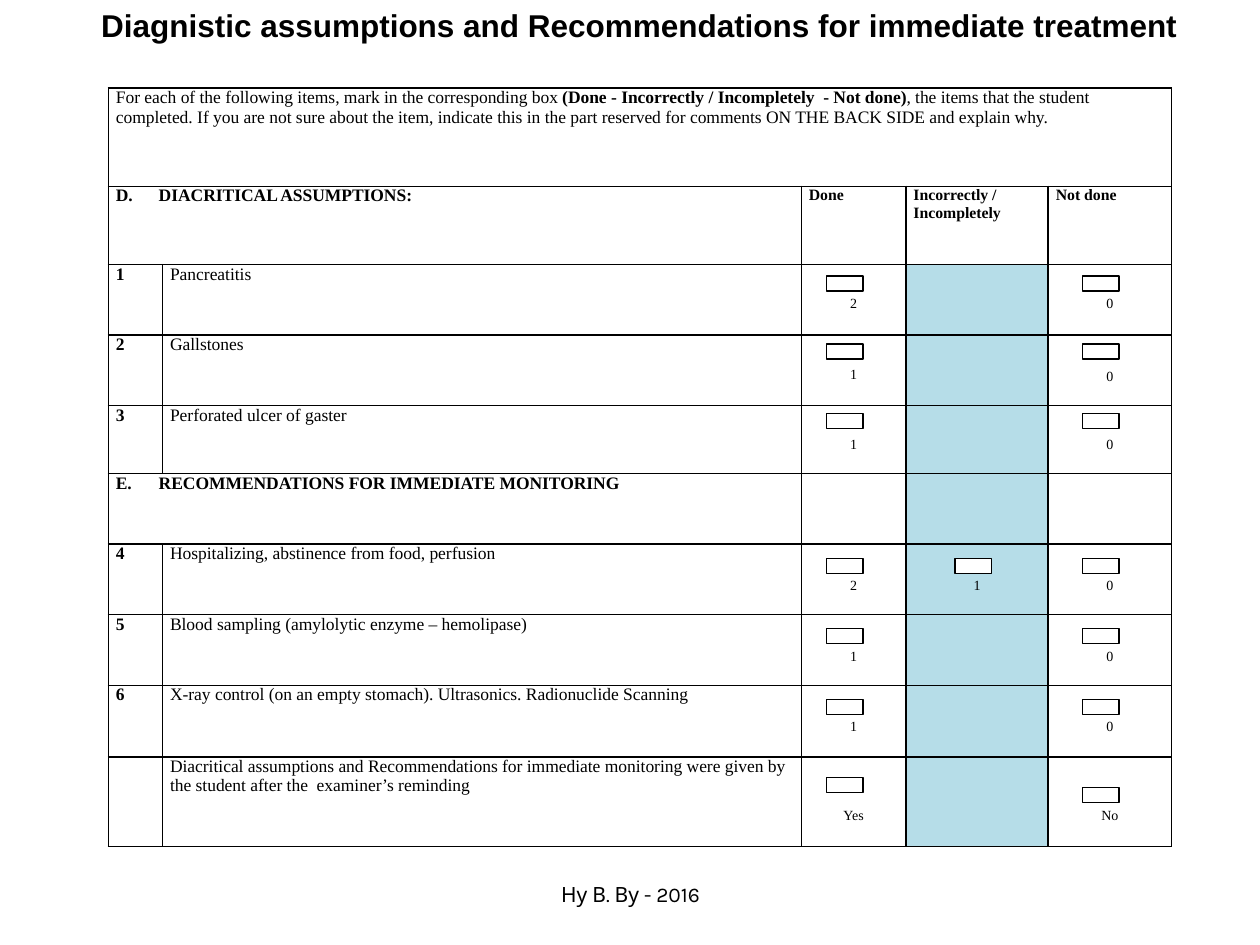
from dataclasses import dataclass
from itertools import accumulate

from lxml import etree
from pptx import Presentation
from pptx.dml.color import RGBColor
from pptx.enum.shapes import MSO_SHAPE
from pptx.enum.text import PP_ALIGN
from pptx.oxml.ns import qn
from pptx.util import Inches, Pt

LEFT, CENTER = PP_ALIGN.LEFT, PP_ALIGN.CENTER
RECTANGLE = MSO_SHAPE.RECTANGLE


@dataclass(frozen=True)
class Theme:
    ink: str = "000000"
    paper: str = "FFFFFF"
    shade: str = "B6DDE8"
    title_font: str = "Arial"
    body_font: str = "Times New Roman"
    footer_font: str = "Karla"
    title_size: int = 18
    footer_size: int = 12
    body_size: int = 10
    head_size: int = 9
    score_size: int = 8
    rule: float = 1
    box_line: float = 0.75


THEME = Theme()

# Grid of the checklist, in inches
COLUMNS = [0.43, 5.07, 0.83, 1.13, 0.98]
ROWS = [0.78, 0.62, 0.56, 0.56, 0.54, 0.56, 0.56, 0.56, 0.57, 0.71]
DONE, PARTLY, MISSED = 2, 3, 4
BOX_INSET = {DONE: 0.2, PARTLY: 0.39, MISSED: 0.27}
BOX_WIDTH, BOX_HEIGHT = 0.29, 0.12
CELL_INSET, HEADING_INDENT = 0.06, 0.34

INTRO = [
    ("For each of the following items, mark in the corresponding box ", False),
    ("(Done - Incorrectly / Incompletely  - Not done)", True),
    (", the items that the student completed. If you are not sure about the item, "
     "indicate this in the part reserved for comments ON THE BACK SIDE and explain why.", False),
]
HEADINGS = {1: "D.\tDIACRITICAL ASSUMPTIONS:",
            5: "E.\tRECOMMENDATIONS FOR IMMEDIATE MONITORING"}
COLUMN_HEADS = {DONE: "Done", PARTLY: "Incorrectly / Incompletely", MISSED: "Not done"}
# row: number, item, {column: (score, top of score, top of box)}, tops within the row
ITEMS = {
    2: ("1", "Pancreatitis",
        {DONE: ("2", 0.25, 0.09), MISSED: ("0", 0.25, 0.09)}),
    3: ("2", "Gallstones",
        {DONE: ("1", 0.25, 0.07), MISSED: ("0", 0.27, 0.07)}),
    4: ("3", "Perforated ulcer of gaster",
        {DONE: ("1", 0.25, 0.06), MISSED: ("0", 0.25, 0.06)}),
    6: ("4", "Hospitalizing, abstinence from food, perfusion",
        {DONE: ("2", 0.27, 0.11), PARTLY: ("1", 0.27, 0.11), MISSED: ("0", 0.27, 0.11)}),
    7: ("5", "Blood sampling (amylolytic enzyme – hemolipase)",
        {DONE: ("1", 0.27, 0.11), MISSED: ("0", 0.27, 0.11)}),
    8: ("6", "X-ray control (on an empty stomach). Ultrasonics. Radionuclide Scanning",
        {DONE: ("1", 0.27, 0.11), MISSED: ("0", 0.27, 0.11)}),
    9: ("", "Diacritical assumptions and Recommendations for immediate monitoring "
            "were given by the student after the  examiner’s reminding",
        {DONE: ("Yes", 0.4, 0.16), MISSED: ("No", 0.4, 0.24)}),
}


def color(value):
    return RGBColor.from_string(value)


def write(frame, text, *, size=THEME.body_size, font=THEME.body_font,
          bold=False, align=LEFT, hanging=0):
    """Fill a text frame with a string or with (text, bold) pairs."""
    frame.word_wrap = True
    para = frame.paragraphs[0]
    para.alignment = align
    if hanging:
        properties = para._p.get_or_add_pPr()
        properties.set("marL", str(Inches(hanging)))
        properties.set("indent", str(-Inches(hanging)))
    for words, strong in [(text, bold)] if isinstance(text, str) else text:
        span = para.add_run()
        span.text = words
        span.font.size, span.font.name, span.font.bold = Pt(size), font, strong
        span.font.color.rgb = color(THEME.ink)


def add_label(page, box, text, **style):
    label = page.shapes.add_textbox(*map(Inches, box))
    write(label.text_frame, text, align=CENTER, **style)


def style_cell(cell, fill):
    cell.margin_left = cell.margin_right = Inches(CELL_INSET)
    cell.margin_top = cell.margin_bottom = 0
    properties = cell._tc.get_or_add_tcPr()
    for side in ("a:lnL", "a:lnR", "a:lnT", "a:lnB"):
        line = etree.SubElement(properties, qn(side), w=str(Pt(THEME.rule)))
        solid = etree.SubElement(line, qn("a:solidFill"))
        etree.SubElement(solid, qn("a:srgbClr"), val=THEME.ink)
    cell.fill.solid()
    cell.fill.fore_color.rgb = color(fill)


def add_checklist(page, box):
    table = page.shapes.add_table(len(ROWS), len(COLUMNS), *map(Inches, box)).table
    table.first_row = table.horz_banding = False
    for column, width in zip(table.columns, COLUMNS):
        column.width = Inches(width)
    for row, height in zip(table.rows, ROWS):
        row.height = Inches(height)
    for r in range(len(ROWS)):
        for c in range(len(COLUMNS)):
            style_cell(table.cell(r, c), THEME.shade if c == PARTLY and r > 1 else THEME.paper)

    # Introduction and headings
    table.cell(0, 0).merge(table.cell(0, len(COLUMNS) - 1))
    write(table.cell(0, 0).text_frame, INTRO)
    for r, heading in HEADINGS.items():
        table.cell(r, 0).merge(table.cell(r, 1))
        write(table.cell(r, 0).text_frame, heading, bold=True, hanging=HEADING_INDENT)
    for c, heading in COLUMN_HEADS.items():
        write(table.cell(1, c).text_frame, heading, size=THEME.head_size, bold=True)

    # Items with their scores
    for r, (number, item, scores) in ITEMS.items():
        if number:
            write(table.cell(r, 0).text_frame, number, bold=True)
        write(table.cell(r, 1).text_frame, item)
        for c, (score, score_top, _) in scores.items():
            cell = table.cell(r, c)
            cell.margin_top = Inches(score_top)
            write(cell.text_frame, score, size=THEME.score_size, align=CENTER)


def add_tick_boxes(page, box):
    lefts = list(accumulate(COLUMNS, initial=box[0]))
    tops = list(accumulate(ROWS, initial=box[1]))
    for r, (_, _, scores) in ITEMS.items():
        for c, (_, _, box_top) in scores.items():
            place = (lefts[c] + BOX_INSET[c], tops[r] + box_top, BOX_WIDTH, BOX_HEIGHT)
            tick = page.shapes.add_shape(RECTANGLE, *map(Inches, place))
            tick.shadow.inherit = False
            tick.fill.solid()
            tick.fill.fore_color.rgb = color(THEME.paper)
            tick.line.color.rgb = color(THEME.ink)
            tick.line.width = Pt(THEME.box_line)


def main():
    deck = Presentation()
    deck.slide_width, deck.slide_height = Inches(10), Inches(7.5)
    page = deck.slides.add_slide(deck.slide_layouts[6])
    # Footer and title
    add_label(page, (3.42, 6.95, 3.17, 0.4), "Ну В. Ву - 2016",
              size=THEME.footer_size, font=THEME.footer_font)
    add_label(page, (0.43, 0, 9.29, 0.4),
              "Diagnistic assumptions and Recommendations for immediate treatment",
              size=THEME.title_size, font=THEME.title_font, bold=True)
    # Checklist with tick boxes on top
    checklist = (0.86, 0.7, sum(COLUMNS), sum(ROWS))
    add_checklist(page, checklist)
    add_tick_boxes(page, checklist)
    deck.save("out.pptx")


if __name__ == "__main__":
    main()
